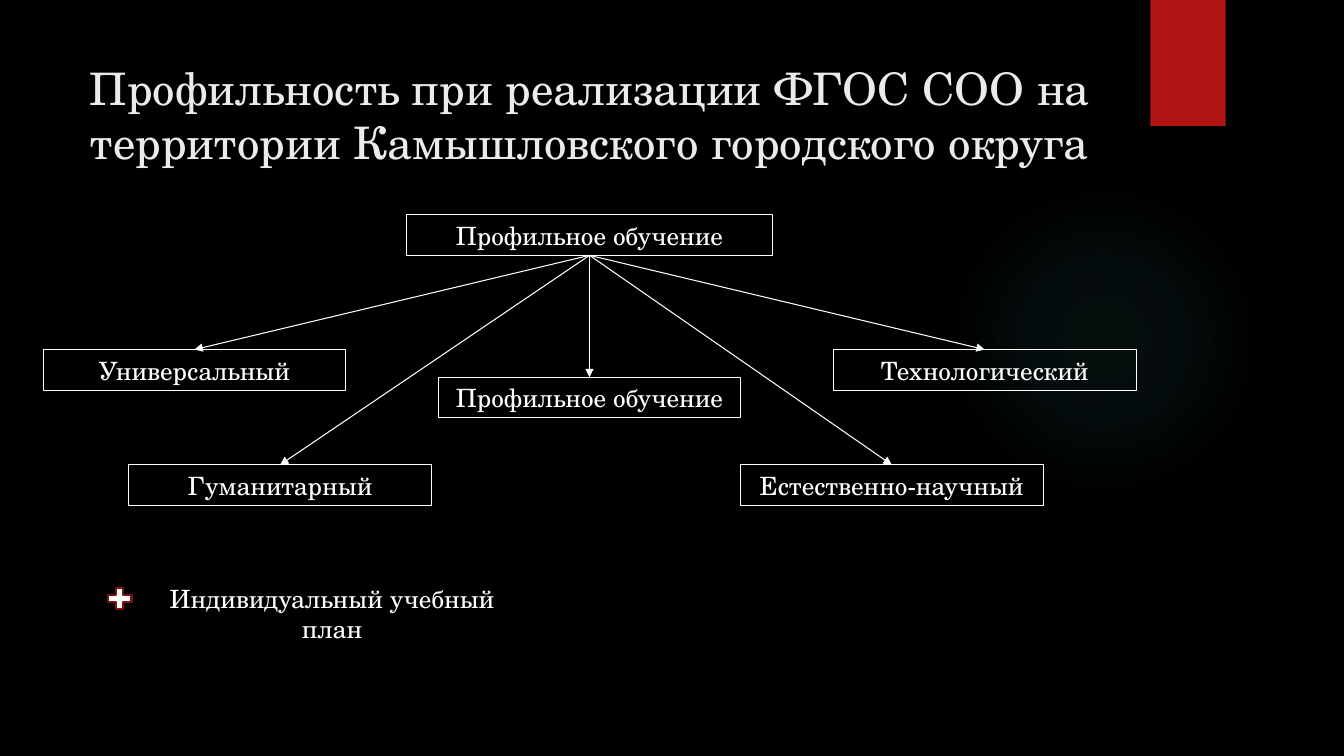
from lxml import etree
from pptx import Presentation
from pptx.dml.color import RGBColor
from pptx.enum.shapes import MSO_CONNECTOR, MSO_SHAPE
from pptx.enum.text import MSO_ANCHOR, PP_ALIGN
from pptx.oxml import parse_xml
from pptx.oxml.ns import nsdecls, qn
from pptx.util import Pt

FONT = "TeX Gyre Schola"
WHITE = "FFFFFF"
TOP_SITE, BOTTOM_SITE = 0, 2


def paint(color_format, color):
    color_format.rgb = RGBColor.from_string(color)


def write(shape, text, size, color):
    frame = shape.text_frame
    frame.word_wrap = True
    frame.vertical_anchor = MSO_ANCHOR.MIDDLE
    frame.text = text
    paragraph = frame.paragraphs[0]
    paragraph.alignment = PP_ALIGN.CENTER
    font = paragraph.runs[0].font
    font.name = FONT
    font.size = Pt(size)
    paint(font.color, color)


presentation = Presentation()
presentation.slide_width = Pt(960)
presentation.slide_height = Pt(540)
slide = presentation.slides.add_slide(presentation.slide_layouts[6])
slide.background.fill.solid()
paint(slide.background.fill.fore_color, "000000")
shapes = slide.shapes

glow = shapes.add_shape(MSO_SHAPE.OVAL, Pt(677.5), Pt(131.8), Pt(221.8), Pt(221.8))
glow.shadow.inherit = False
glow.line.fill.background()
stops = "".join(
    f'<a:gs pos="{position}000"><a:srgbClr val="50B9C1"><a:alpha val="{alpha}000"/></a:srgbClr></a:gs>'
    for position, alpha in [(0, 7), (36, 6), (69, 0)]
)
gradient = parse_xml(
    f'<a:gradFill {nsdecls("a")}><a:gsLst>{stops}</a:gsLst><a:path path="circle">'
    '<a:fillToRect l="50000" t="50000" r="50000" b="50000"/></a:path></a:gradFill>'
)
glow._element.spPr.find(qn("a:prstGeom")).addnext(gradient)

ribbon = shapes.add_shape(MSO_SHAPE.RECTANGLE, Pt(821.8), Pt(0), Pt(53.8), Pt(90))
ribbon.shadow.inherit = False
ribbon.fill.solid()
paint(ribbon.fill.fore_color, "B01513")
ribbon.line.fill.background()

title = shapes.add_textbox(Pt(51), Pt(36), Pt(741), Pt(92))
write(title, "Профильность при реализации ФГОС СОО на территории Камышловского городского округа", 32, "EBEBEB")

boxes = []
for text, left, top, width in [
    ("Профильное обучение", 290.6, 153.3, 261),
    ("Универсальный", 30.8, 249.7, 216.2),
    ("Гуманитарный", 92, 332, 216.2),
    ("Профильное обучение", 313, 269.4, 216.2),
    ("Естественно-научный", 528.9, 332, 216.2),
    ("Технологический", 595.3, 249.7, 216.2),
]:
    box = shapes.add_shape(MSO_SHAPE.RECTANGLE, Pt(left), Pt(top), Pt(width), Pt(29.1))
    box.shadow.inherit = False
    box.fill.background()
    box.line.width = Pt(0.75)
    paint(box.line.color, WHITE)
    write(box, text, 18, WHITE)
    boxes.append(box)

root, *profiles = boxes
for profile in profiles:
    arrow = shapes.add_connector(MSO_CONNECTOR.STRAIGHT, Pt(0), Pt(0), Pt(0), Pt(0))
    arrow.begin_connect(root, BOTTOM_SITE)
    arrow.end_connect(profile, TOP_SITE)
    arrow.line.width = Pt(0.75)
    paint(arrow.line.color, WHITE)
    etree.SubElement(arrow.line._get_or_add_ln(), qn("a:tailEnd"), type="triangle")
    etree.SubElement(arrow._element.spPr, qn("a:effectLst"))

plus = shapes.add_shape(MSO_SHAPE.MATH_PLUS, Pt(74), Pt(417.3), Pt(23), Pt(20.2))
plus.shadow.inherit = False
plus.fill.solid()
paint(plus.fill.fore_color, WHITE)
plus.line.width = Pt(1.5)
paint(plus.line.color, "82100E")

plan = shapes.add_textbox(Pt(99), Pt(412.9), Pt(276.5), Pt(29.1))
write(plan, "Индивидуальный учебный план", 18, WHITE)
plan.text_frame.vertical_anchor = MSO_ANCHOR.TOP

presentation.save("out.pptx")
